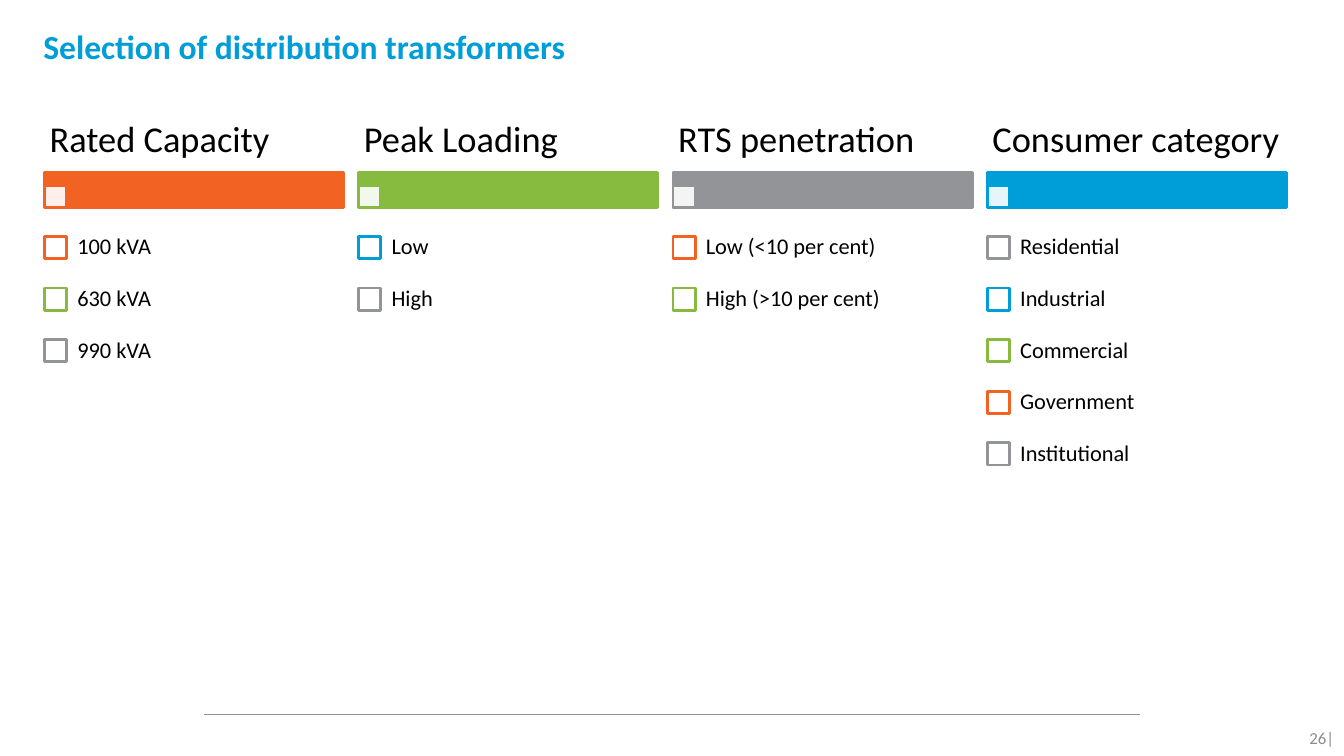
from lxml.etree import SubElement
from pptx import Presentation
from pptx.dml.color import RGBColor
from pptx.enum.shapes import MSO_CONNECTOR as Connector, MSO_SHAPE as Shape
from pptx.enum.text import MSO_ANCHOR as Anchor, MSO_AUTO_SIZE as AutoSize, PP_ALIGN as Align
from pptx.oxml.ns import qn
from pptx.util import Cm, Pt

FONT = "Calibri"
ORANGE = RGBColor(0xF1, 0x62, 0x23)
GREEN = RGBColor(0x86, 0xBB, 0x3F)
GRAY = RGBColor(0x92, 0x94, 0x97)
BLUE = RGBColor(0x00, 0x9E, 0xD8)
WHITE = RGBColor(0xFF, 0xFF, 0xFF)
BLACK = RGBColor(0x00, 0x00, 0x00)
RULE_GRAY = RGBColor(0x8F, 0x91, 0x94)
NUMBER_GRAY = RGBColor(0x8C, 0x8C, 0x8C)

CRITERIA = [
    ("Rated Capacity", ORANGE, [("100 kVA", ORANGE), ("630 kVA", GREEN), ("990 kVA", GRAY)]),
    ("Peak Loading", GREEN, [("Low", BLUE), ("High", GRAY)]),
    ("RTS penetration", GRAY, [("Low (<10 per cent)", ORANGE), ("High (>10 per cent)", GREEN)]),
    ("Consumer category", BLUE, [
        ("Residential", GRAY), ("Industrial", BLUE), ("Commercial", GREEN),
        ("Government", ORANGE), ("Institutional", GRAY)]),
]

COLUMN_LEFT, COLUMN_TOP = 1.12, 2.74
COLUMN_WIDTH, COLUMN_PITCH = 7.54, 7.92
HEADING_HEIGHT, BAR_HEIGHT = 1.6, 0.89
SQUARE = 0.56
FIRST_ROW, ROW_HEIGHT = 2.85, 1.3
LABEL_INDENT = 0.53


def set_margins(frame, horizontal, vertical):
    frame.margin_left = frame.margin_right = Cm(horizontal)
    frame.margin_top = frame.margin_bottom = Cm(vertical)


def write(paragraph, text, size, color, bold=False):
    run = paragraph.add_run()
    run.text = text
    run.font.name = FONT
    run.font.size = Pt(size)
    run.font.bold = bold
    run.font.color.rgb = color


def add_text(shapes, left, top, width, height, text, size, color, margins):
    box = shapes.add_textbox(Cm(left), Cm(top), Cm(width), Cm(height))
    frame = box.text_frame
    frame.word_wrap = True
    frame.vertical_anchor = Anchor.MIDDLE
    set_margins(frame, *margins)
    paragraph = frame.paragraphs[0]
    write(paragraph, text, size, color)
    return paragraph


def add_rectangle(shapes, left, top, width, height, fill, line):
    shape = shapes.add_shape(Shape.RECTANGLE, Cm(left), Cm(top), Cm(width), Cm(height))
    shape.shadow.inherit = False
    shape.fill.solid()
    shape.fill.fore_color.rgb = fill
    shape.line.color.rgb = line
    shape.line.width = Pt(2)
    return shape


def add_title(slide, left, top, width, height):
    title = slide.shapes.title
    title.left, title.top, title.width, title.height = Cm(left), Cm(top), Cm(width), Cm(height)
    frame = title.text_frame
    frame.auto_size = AutoSize.NONE
    frame.word_wrap = True
    frame.vertical_anchor = Anchor.TOP
    set_margins(frame, 0, 0.13)
    paragraph = frame.paragraphs[0]
    paragraph.alignment = Align.LEFT
    write(paragraph, "Selection of distribution transformers", 24, BLUE, bold=True)


def add_criterion(slide, left, top, width, heading, color, options):
    shapes = slide.shapes.add_group_shape().shapes
    bar_top = top + HEADING_HEIGHT
    add_rectangle(shapes, left, bar_top, width, BAR_HEIGHT, color, color)
    marker = add_rectangle(
        shapes, left, bar_top + BAR_HEIGHT - SQUARE, SQUARE, SQUARE, WHITE, color)
    fill_color = marker.fill._xPr.find(qn("a:solidFill"))[0]
    SubElement(fill_color, qn("a:alpha")).set("val", "90000")
    paragraph = add_text(
        shapes, left, top, width, HEADING_HEIGHT, heading, 26, BLACK, (0.13, 0.1))
    paragraph.line_spacing = 0.9

    for row, (label, box_color) in enumerate(options):
        row_top = top + FIRST_ROW + row * ROW_HEIGHT
        square_top = row_top + (ROW_HEIGHT - SQUARE) / 2
        add_rectangle(shapes, left, square_top, SQUARE, SQUARE, WHITE, box_color)
        paragraph = add_text(
            shapes, left + LABEL_INDENT, row_top, width - LABEL_INDENT, ROW_HEIGHT,
            label, 16, BLACK, (0.3, 0.3))
        paragraph.line_spacing = 0.9


def add_footer(slide, left, top, width):
    rule = slide.shapes.add_connector(
        Connector.STRAIGHT, Cm(left), Cm(top), Cm(left + width), Cm(top))
    rule.line.color.rgb = RULE_GRAY
    rule.line.width = Pt(0.75)
    SubElement(rule._element.spPr, qn("a:effectLst"))
    number = add_text(
        slide.shapes, 31.72, top + 0.08, 2.15, 1.02, "26|", 12, NUMBER_GRAY, (0.25, 0.13))
    number.alignment = Align.RIGHT


def main():
    presentation = Presentation()
    presentation.slide_width = Cm(33.87)
    presentation.slide_height = Cm(19.05)
    slide = presentation.slides.add_slide(presentation.slide_layouts.get_by_name("Title Only"))
    add_footer(slide, 5.13, 18.01, 23.6)
    add_title(slide, 1.09, 0.53, 31.34, 2.21)
    for column, criterion in enumerate(CRITERIA):
        left = COLUMN_LEFT + column * COLUMN_PITCH
        add_criterion(slide, left, COLUMN_TOP, COLUMN_WIDTH, *criterion)
    presentation.save("out.pptx")


if __name__ == "__main__":
    main()
